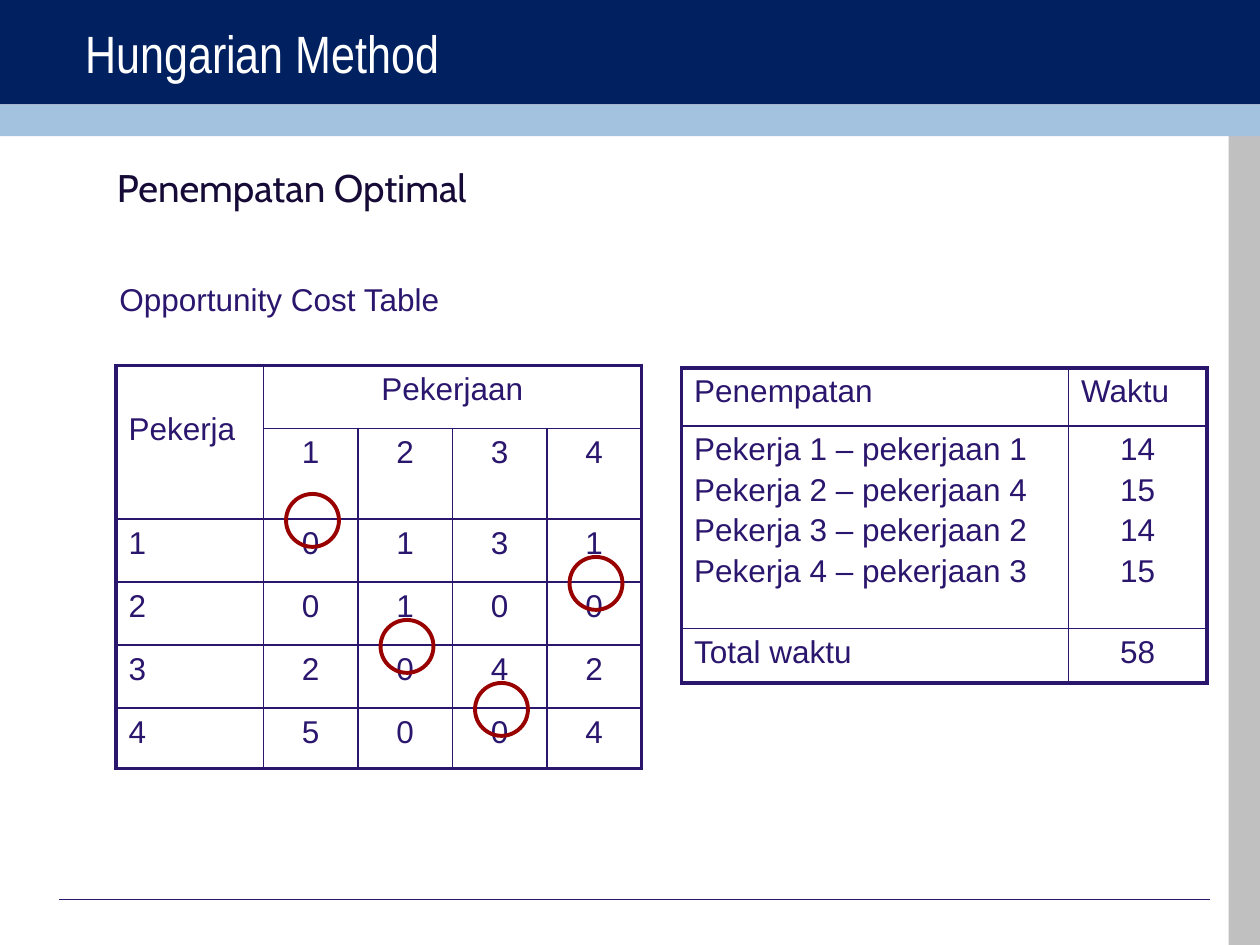
from lxml.etree import SubElement
from pptx import Presentation
from pptx.dml.color import RGBColor
from pptx.enum.shapes import MSO_CONNECTOR, MSO_SHAPE
from pptx.enum.text import MSO_ANCHOR, PP_ALIGN
from pptx.oxml.ns import qn
from pptx.util import Inches, Pt

INK = "2B166E"
BANDS = [
    (9.75, 1.07, 0.25, 6.43, "C0C0C0"),
    (0, 0, 10, 0.83, "002060"),
    (0, 0.83, 10, 0.25, "A3C2E0"),
]
TEXTS = [
    ("Hungarian Method", (0.58, 0.08, 9, 0.67), 30, "Arial Narrow", "FFFFFF", MSO_ANCHOR.MIDDLE),
    ("Penempatan Optimal", (0.83, 1.25, 4.17, 4.88), 22, "Cabin", "160B37", MSO_ANCHOR.TOP),
    ("Opportunity Cost Table", (0.85, 2.17, 2.77, 0.4), 18, "Arial", INK, MSO_ANCHOR.TOP),
]
COSTS = [
    ["Pekerja", "Pekerjaan", "", "", ""],
    ["", "1", "2", "3", "4"],
    ["1", "0", "1", "3", "1"],
    ["2", "0", "1", "0", "0"],
    ["3", "2", "0", "4", "2"],
    ["4", "5", "0", "0", "4"],
]
COST_COLS = [1.17, 0.75, 0.75, 0.75, 0.75]
COST_ROWS = [0.5, 0.71, 0.5, 0.5, 0.5, 0.48]
COST_MERGES = [((0, 0), (1, 0)), ((0, 1), (0, 4))]
ASSIGNED_JOBS = [1, 4, 2, 3]
TIMES = [14, 15, 14, 15]
PLACEMENTS = [
    ["Penempatan", "Waktu"],
    [
        "\n".join(f"Pekerja {w} – pekerjaan {j}" for w, j in enumerate(ASSIGNED_JOBS, 1)),
        "\n".join(map(str, TIMES)),
    ],
    ["Total waktu", str(sum(TIMES))],
]


def rgb(value):
    return RGBColor.from_string(value)


def style(p, size, font, color):
    p.font.size, p.font.name = Pt(size), font
    p.font.color.rgb = rgb(color)


def add_text(slide, text, box, size, font, color, anchor):
    tf = slide.shapes.add_textbox(*map(Inches, box)).text_frame
    tf.word_wrap = True
    tf.vertical_anchor = anchor
    tf.text = text
    style(tf.paragraphs[0], size, font, color)


def add_border(cell, side, width):
    ln = SubElement(cell._tc.get_or_add_tcPr(), qn(f"a:ln{side}"), w=str(Pt(width)))
    fill = SubElement(ln, qn("a:solidFill"))
    SubElement(fill, qn("a:srgbClr"), val=INK)


def add_grid(slide, left, top, cols, rows, content, merges=(), left_cells=()):
    frame = slide.shapes.add_table(
        len(rows), len(cols), *map(Inches, (left, top, sum(cols), sum(rows))))
    table = frame.table
    table.first_row = table.horz_banding = False
    for col, width in zip(table.columns, cols):
        col.width = Inches(width)
    for row, height in zip(table.rows, rows):
        row.height = Inches(height)
    for start, end in merges:
        table.cell(*start).merge(table.cell(*end))
    for r, texts in enumerate(content):
        for c, text in enumerate(texts):
            cell = table.cell(r, c)
            if cell.is_spanned:
                continue
            bottom, right = r, c
            if cell.is_merge_origin:
                bottom, right = r + cell.span_height - 1, c + cell.span_width - 1
            outer = {"L": c == 0, "R": right == len(cols) - 1,
                     "T": r == 0, "B": bottom == len(rows) - 1}
            for side, is_outer in outer.items():
                add_border(cell, side, 2.25 if is_outer else 1)
            cell.fill.background()
            cell.text = text
            for i, p in enumerate(cell.text_frame.paragraphs):
                style(p, 18, "Arial", INK)
                p.space_before = Pt(3 if i else 0)
                if c and (r, c) not in left_cells:
                    p.alignment = PP_ALIGN.CENTER
    return table


prs = Presentation()
prs.slide_width, prs.slide_height = Inches(10), Inches(7.5)
slide = prs.slides.add_slide(prs.slide_layouts[6])

for *box, color in BANDS:
    sp = slide.shapes.add_shape(MSO_SHAPE.RECTANGLE, *map(Inches, box))
    sp.shadow.inherit = False
    sp.fill.solid()
    sp.fill.fore_color.rgb = rgb(color)
    sp.line.fill.background()

rule = slide.shapes.add_connector(
    MSO_CONNECTOR.STRAIGHT, *map(Inches, (0.47, 7.14, 9.6, 7.14)))
rule.line.color.rgb = rgb(INK)
rule.line.width = Pt(0.75)
SubElement(rule._element.spPr, qn("a:effectLst"))

for text in TEXTS:
    add_text(slide, *text)

add_grid(slide, 5.41, 2.92, [3.07, 1.1], [0.46, 1.61, 0.43], PLACEMENTS, left_cells=[(0, 1)])
costs = add_grid(slide, 0.92, 2.9, COST_COLS, COST_ROWS, COSTS, COST_MERGES)
costs.cell(0, 0).margin_top = Inches(0.37)

for worker, job in enumerate(ASSIGNED_JOBS):
    box = (2.27 + 0.75 * (job - 1), 3.92 + 0.5 * worker, 0.42, 0.42)
    ring = slide.shapes.add_shape(MSO_SHAPE.OVAL, *map(Inches, box))
    ring.shadow.inherit = False
    ring.fill.background()
    ring.line.color.rgb = rgb("990000")
    ring.line.width = Pt(2.25)

prs.save("out.pptx")
